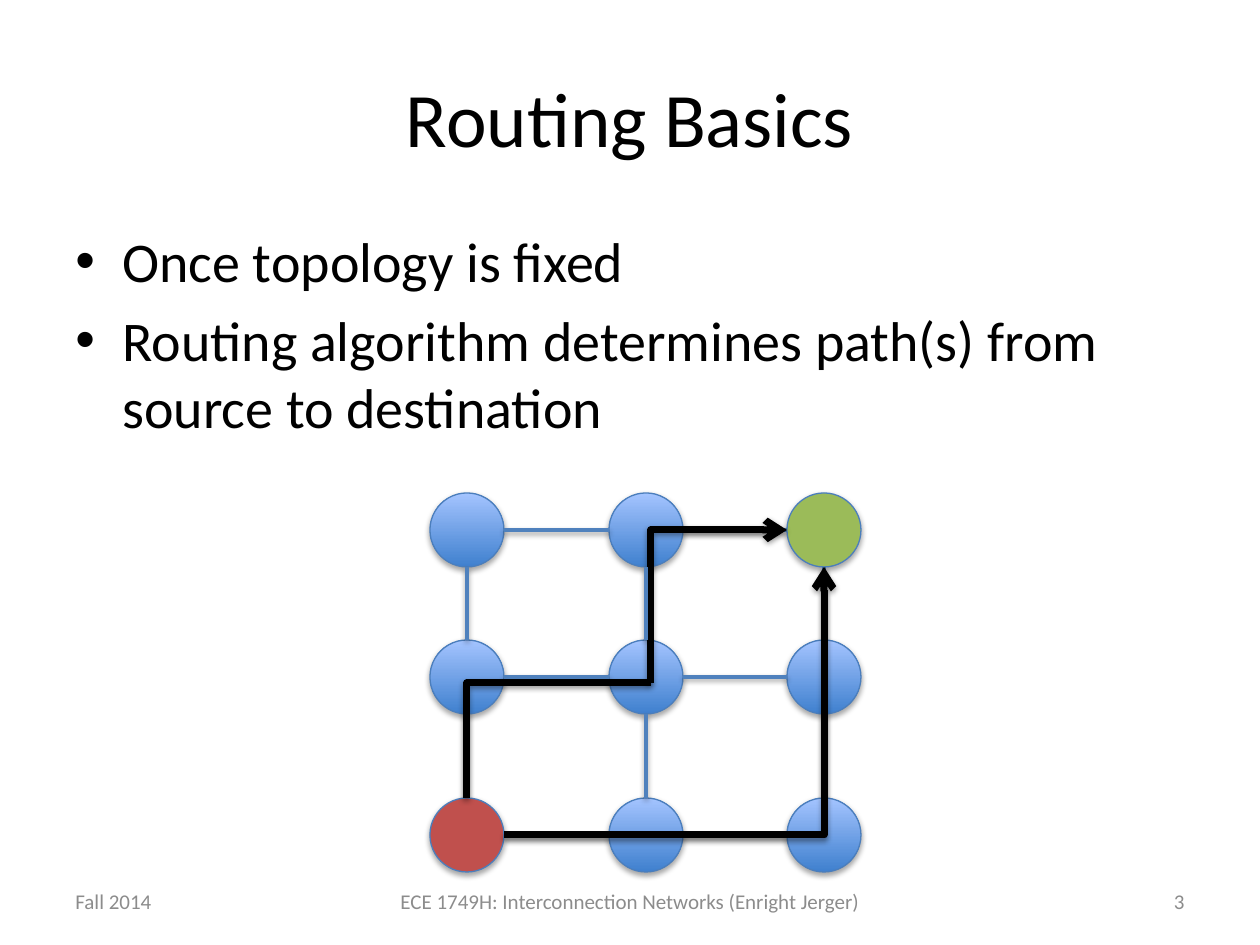
"""Build the Routing Basics slide: bullets above a 3 by 3 mesh with two routes."""
from itertools import product

from lxml.etree import SubElement
from pptx import Presentation
from pptx.dml.color import RGBColor
from pptx.enum.shapes import MSO_CONNECTOR, MSO_SHAPE
from pptx.enum.text import MSO_ANCHOR, PP_ALIGN
from pptx.oxml.ns import qn
from pptx.util import Emu, Pt

SCALE = 914400 / 126
COLORS = {
    "text": "000000", "footer": "8C8C8C", "link": "4F81BD", "route": "000000",
    "outline": "4B7EBC", "low": "3F80CE", "high": "A4C4FF",
    "source": "C0504D", "destination": "9BBB59", "shadow": "000000",
}
COLS = (467, 646, 824)
ROWS = (530, 677, 835)
RADIUS = 37
SPECIAL_NODES = {(0, 2): "source", (2, 0): "destination"}
BACK_LINKS = {
    ((2, 0), (2, 1)), ((2, 1), (2, 2)), ((0, 1), (0, 2)),
    ((1, 0), (2, 0)), ((1, 2), (2, 2)), ((0, 2), (1, 2)),
}
ROUTES = (
    ((504, 835), (824, 567), "tailEnd"),
    ((651, 683), (467, 798), None),
    ((787, 530), (651, 683), "headEnd"),
)
BULLETS = (
    "Once topology is fixed",
    "Routing algorithm determines path(s) from source to destination",
)
FOOTERS = (
    ("Fall 2014", 63, 294, PP_ALIGN.LEFT),
    ("3", 903, 294, PP_ALIGN.RIGHT),
    ("ECE 1749H: Interconnection Networks (Enright Jerger)", 357, 546, PP_ALIGN.CENTER),
)


def px(n):
    return Emu(round(n * SCALE))


def rgb(name):
    return RGBColor.from_string(COLORS[name])


def add_shadow(sp, alpha, dist):
    effects = SubElement(sp._element.spPr, qn("a:effectLst"))
    shadow = SubElement(effects, qn("a:outerShdw"), blurRad="40000", dist=str(dist),
                        dir="5400000", rotWithShape="0")
    color = SubElement(shadow, qn("a:srgbClr"), val=COLORS["shadow"])
    SubElement(color, qn("a:alpha"), val=str(alpha * 1000))


def add_text(s, box, lines, size, color="text", align=PP_ALIGN.LEFT,
             anchor=MSO_ANCHOR.MIDDLE, bullet=False):
    tf = s.shapes.add_textbox(*map(px, box)).text_frame
    tf.word_wrap = True
    tf.vertical_anchor = anchor
    for i, line in enumerate(lines):
        p = tf.paragraphs[0] if i == 0 else tf.add_paragraph()
        p.alignment = align
        r = p.add_run()
        r.text = line
        for key, value in {"name": "Calibri", "size": Pt(size)}.items():
            setattr(r.font, key, value)
        r.font.color.rgb = rgb(color)
        if bullet:
            p.space_before = Pt(7)
            pPr = p._p.get_or_add_pPr()
            pPr.set("marL", str(px(47)))
            pPr.set("indent", str(-px(47)))
            SubElement(pPr, qn("a:buFont"), typeface="Arial")
            SubElement(pPr, qn("a:buChar"), char="•")


def add_line(s, start, end, color, width, kind=MSO_CONNECTOR.STRAIGHT):
    sp = s.shapes.add_connector(kind, *map(px, (*start, *end)))
    sp.line.color.rgb = rgb(color)
    sp.line.width = Pt(width)
    add_shadow(sp, 38, 20000)
    return sp


def add_link(s, a, b):
    (c1, r1), (c2, r2) = a, b
    dx, dy = (c2 - c1) * RADIUS, (r2 - r1) * RADIUS
    add_line(s, (COLS[c1] + dx, ROWS[r1] + dy), (COLS[c2] - dx, ROWS[r2] - dy), "link", 2)


def add_route(s, start, end, arrow):
    sp = add_line(s, start, end, "route", 4, MSO_CONNECTOR.ELBOW)
    spPr = sp._element.spPr
    spPr.find(qn("a:prstGeom")).set("prst", "bentConnector2")
    if arrow:
        SubElement(spPr.find(qn("a:ln")), qn(f"a:{arrow}"), type="arrow")


def add_node(s, col, row):
    sp = s.shapes.add_shape(MSO_SHAPE.OVAL, px(COLS[col] - RADIUS), px(ROWS[row] - RADIUS),
                            px(2 * RADIUS), px(2 * RADIUS))
    special = SPECIAL_NODES.get((col, row))
    if special:
        sp.fill.solid()
        sp.fill.fore_color.rgb = rgb(special)
    else:
        sp.fill.gradient()
        sp.fill.gradient_angle = 90
        for stop, color, position in zip(sp.fill.gradient_stops, ("low", "high"), (0, 1)):
            stop.color.rgb = rgb(color)
            stop.position = position
    sp.line.color.rgb = rgb("outline")
    sp.line.width = Pt(0.75)
    add_shadow(sp, 35, 23000)


def add_mesh(s):
    nodes = list(product(range(3), repeat=2))
    links = [((c, r), (c + dc, r + dr)) for c, r in nodes
             for dc, dr in ((1, 0), (0, 1)) if c + dc < 3 and r + dr < 3]
    for link in links:
        if link in BACK_LINKS:
            add_link(s, *link)
    for node in nodes:
        add_node(s, *node)
    for route in ROUTES:
        add_route(s, *route)
    for link in links:
        if link not in BACK_LINKS:
            add_link(s, *link)


def main():
    prs = Presentation()
    prs.slide_width, prs.slide_height = px(1260), px(945)
    s = prs.slides.add_slide(prs.slide_layouts[6])
    add_text(s, (63, 38, 1134, 157), ["Routing Basics"], 44, align=PP_ALIGN.CENTER)
    add_text(s, (63, 220, 1134, 305), BULLETS, 32, anchor=MSO_ANCHOR.TOP, bullet=True)
    add_mesh(s)
    for text, left, width, align in FOOTERS:
        add_text(s, (left, 876, width, 50), [text], 12, "footer", align)
    prs.save("out.pptx")


if __name__ == "__main__":
    main()
